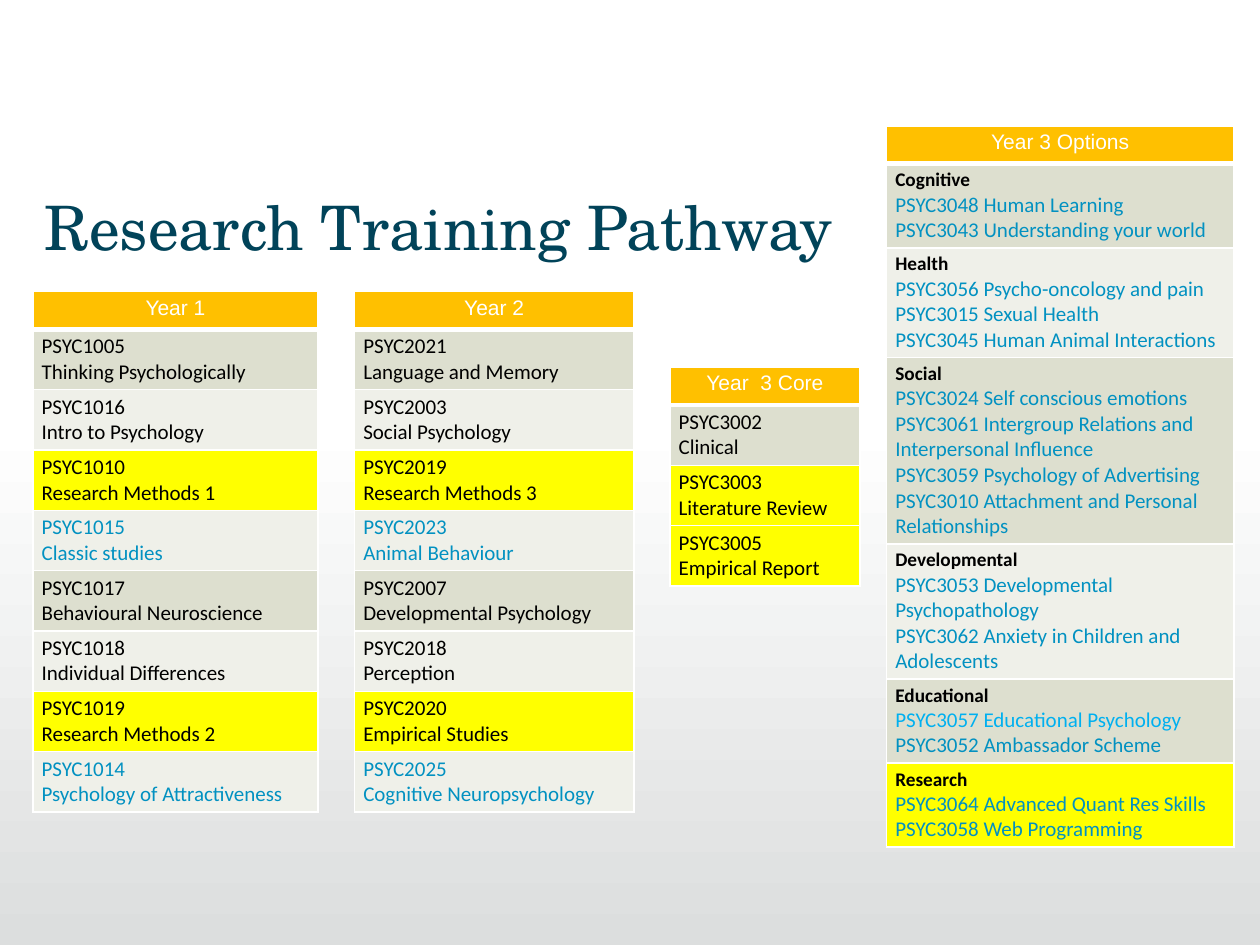
import dataclasses

import pptx
import pptx.dml.color
import pptx.enum.shapes
import pptx.enum.text
import pptx.oxml.ns
import pptx.util
from lxml import etree

Pt = pptx.util.Pt
Align = pptx.enum.text.PP_ALIGN


@dataclasses.dataclass(frozen=True)
class Theme:
    white: str = "FFFFFF"
    grey: str = "DCDEDE"
    navy: str = "014359"
    black: str = "000000"
    blue: str = "0291C1"
    sky: str = "00B0F0"
    gold: str = "FFC000"
    bands: tuple = ("DDDFCF", "EFF0E9")
    yellow: str = "FFFF00"
    serif: str = "TeX Gyre Schola"
    sans: str = "Calibri"
    header: str = "Arial"
    title: int = 35
    body: int = 12
    group: int = 11


THEME = Theme()
PAD_X, PAD_Y = 5, 2.6
HEAD = 21.6  # header row height
LEAD = 1.22  # line height per point of type

# Course lists: code, name, kind (core, method or option)
YEAR1 = [
    ("PSYC1005", "Thinking Psychologically", "core"),
    ("PSYC1016", "Intro to Psychology", "core"),
    ("PSYC1010", "Research Methods 1", "method"),
    ("PSYC1015", "Classic studies", "option"),
    ("PSYC1017", "Behavioural Neuroscience", "core"),
    ("PSYC1018", "Individual Differences", "core"),
    ("PSYC1019", "Research Methods 2", "method"),
    ("PSYC1014", "Psychology of Attractiveness", "option"),
]
YEAR2 = [
    ("PSYC2021", "Language and Memory", "core"),
    ("PSYC2003", "Social Psychology", "core"),
    ("PSYC2019", "Research Methods 3", "method"),
    ("PSYC2023", "Animal Behaviour", "option"),
    ("PSYC2007", "Developmental Psychology", "core"),
    ("PSYC2018", "Perception", "core"),
    ("PSYC2020", "Empirical Studies", "method"),
    ("PSYC2025", "Cognitive Neuropsychology", "option"),
]
YEAR3 = [
    ("PSYC3002", "Clinical", "core"),
    ("PSYC3003", "Literature Review", "method"),
    ("PSYC3005", "Empirical Report", "method"),
]
# Option groups: name, lines once wrapped, courses
GROUPS = [
    ("Cognitive", 2, ["PSYC3048 Human Learning", "PSYC3043 Understanding your world"]),
    ("Health", 3, ["PSYC3056 Psycho-oncology and pain", "PSYC3015 Sexual Health",
                   "PSYC3045 Human Animal Interactions"]),
    ("Social", 6, ["PSYC3024 Self conscious emotions",
                   "PSYC3061 Intergroup Relations and Interpersonal Influence",
                   "PSYC3059 Psychology of Advertising",
                   "PSYC3010 Attachment and Personal Relationships"]),
    ("Developmental", 4, ["PSYC3053 Developmental Psychopathology",
                          "PSYC3062 Anxiety in Children and Adolescents"]),
    ("Educational", 2, ["PSYC3057 Educational Psychology", "PSYC3052 Ambassador Scheme"]),
    ("Research", 2, ["PSYC3064 Advanced Quant Res Skills", "PSYC3058 Web Programming"]),
]
BRIGHT = "PSYC3057 Educational Psychology"


def tint(code):
    return pptx.dml.color.RGBColor.from_string(code)


def write(para, text, size=THEME.body, ink=THEME.black, font=THEME.sans,
          bold=False, align=Align.LEFT):
    para.alignment = align
    run = para.add_run()
    run.text = text
    run.font.size, run.font.name, run.font.bold = Pt(size), font, bold
    run.font.color.rgb = tint(ink)


def inset(frame, left, top, right, low):
    frame.margin_left, frame.margin_top = Pt(left), Pt(top)
    frame.margin_right, frame.margin_bottom = Pt(right), Pt(low)


def border(cell, low):
    props = cell._tc.get_or_add_tcPr()
    qn = pptx.oxml.ns.qn
    for tag, width in (("lnL", 1), ("lnR", 1), ("lnT", 1), ("lnB", low)):
        line = etree.SubElement(props, qn("a:" + tag), w=str(Pt(width)))
        fill = etree.SubElement(line, qn("a:solidFill"))
        etree.SubElement(fill, qn("a:srgbClr"), val=THEME.white)


def fill_cell(cell, lines, shade, low=1):
    border(cell, low)
    cell.fill.solid()
    cell.fill.fore_color.rgb = tint(shade)
    inset(cell, PAD_X, PAD_Y, PAD_X, PAD_Y)
    frame = cell.text_frame
    for i, (text, style) in enumerate(lines):
        para = frame.add_paragraph() if i else frame.paragraphs[0]
        write(para, text, **style)


def grid(slide, box, head, rows):
    """One-column table; each row is (lines, marked, height)."""
    left, top, width = box
    high = HEAD + sum(row[2] for row in rows)
    table = slide.shapes.add_table(
        len(rows) + 1, 1, Pt(left), Pt(top), Pt(width), Pt(high)).table
    table.rows[0].height = Pt(HEAD)
    style = dict(ink=THEME.white, font=THEME.header, align=Align.CENTER)
    fill_cell(table.cell(0, 0), [(head, style)], THEME.gold, low=3)
    for i, (lines, marked, height) in enumerate(rows):
        table.rows[i + 1].height = Pt(height)
        shade = THEME.yellow if marked else THEME.bands[i % 2]
        fill_cell(table.cell(i + 1, 0), lines, shade)


# Table of the courses in one year
def year(slide, box, head, items):
    height = 2 * LEAD * THEME.body + 2 * PAD_Y
    rows = []
    for code, name, kind in items:
        style = dict(ink=THEME.blue if kind == "option" else THEME.black)
        rows.append(([(code, style), (name, style)], kind == "method", height))
    grid(slide, box, head, rows)


# Table of option groups with bold group names
def choice(slide, box, head, groups):
    rows = []
    for name, count, items in groups:
        lines = [(name, dict(size=THEME.group, bold=True))]
        lines += [(item, dict(ink=THEME.sky if item == BRIGHT else THEME.blue))
                  for item in items]
        height = LEAD * (THEME.group + count * THEME.body) + 2 * PAD_Y
        rows.append((lines, name == "Research", height))
    grid(slide, box, head, rows)


# Soft fade behind everything
def fade(slide, box):
    shape = slide.shapes.add_shape(
        pptx.enum.shapes.MSO_SHAPE.RECTANGLE, *map(Pt, box))
    shape.shadow.inherit = False
    shape.line.fill.background()
    shape.fill.gradient()
    shape.fill.gradient_angle = 270
    for stop, place, code in zip(shape.fill.gradient_stops, (0, 1),
                                 (THEME.white, THEME.grey)):
        stop.position, stop.color.rgb = place, tint(code)
    shape.element.getparent().insert(2, shape.element)


# Slide title
def title(slide, box, text):
    shape = slide.shapes.title
    shape.left, shape.top, shape.width, shape.height = map(Pt, box)
    frame = shape.text_frame
    frame.word_wrap = True
    frame.auto_size = pptx.enum.text.MSO_AUTO_SIZE.NONE
    frame.vertical_anchor = pptx.enum.text.MSO_ANCHOR.TOP
    inset(frame, 0, 3.6, 7.2, 3.6)
    write(frame.paragraphs[0], text, size=THEME.title, ink=THEME.navy,
          font=THEME.serif)


def main():
    deck = pptx.Presentation()
    deck.slide_width, deck.slide_height = Pt(720), Pt(540)
    slide = deck.slides.add_slide(deck.slide_layouts[5])
    fade(slide, (-6.5, 240, 726.5, 300))
    title(slide, (25.2, 104.4, 669, 38.2), "Research Training Pathway")
    year(slide, (18.8, 166.6, 163), "Year 1", YEAR1)
    year(slide, (202.6, 166.6, 159.6), "Year 2", YEAR2)
    year(slide, (382.8, 209.8, 108.7), "Year  3 Core", YEAR3)
    choice(slide, (506.6, 72, 198.5), "Year 3 Options", GROUPS)
    deck.save("out.pptx")


if __name__ == "__main__":
    main()
